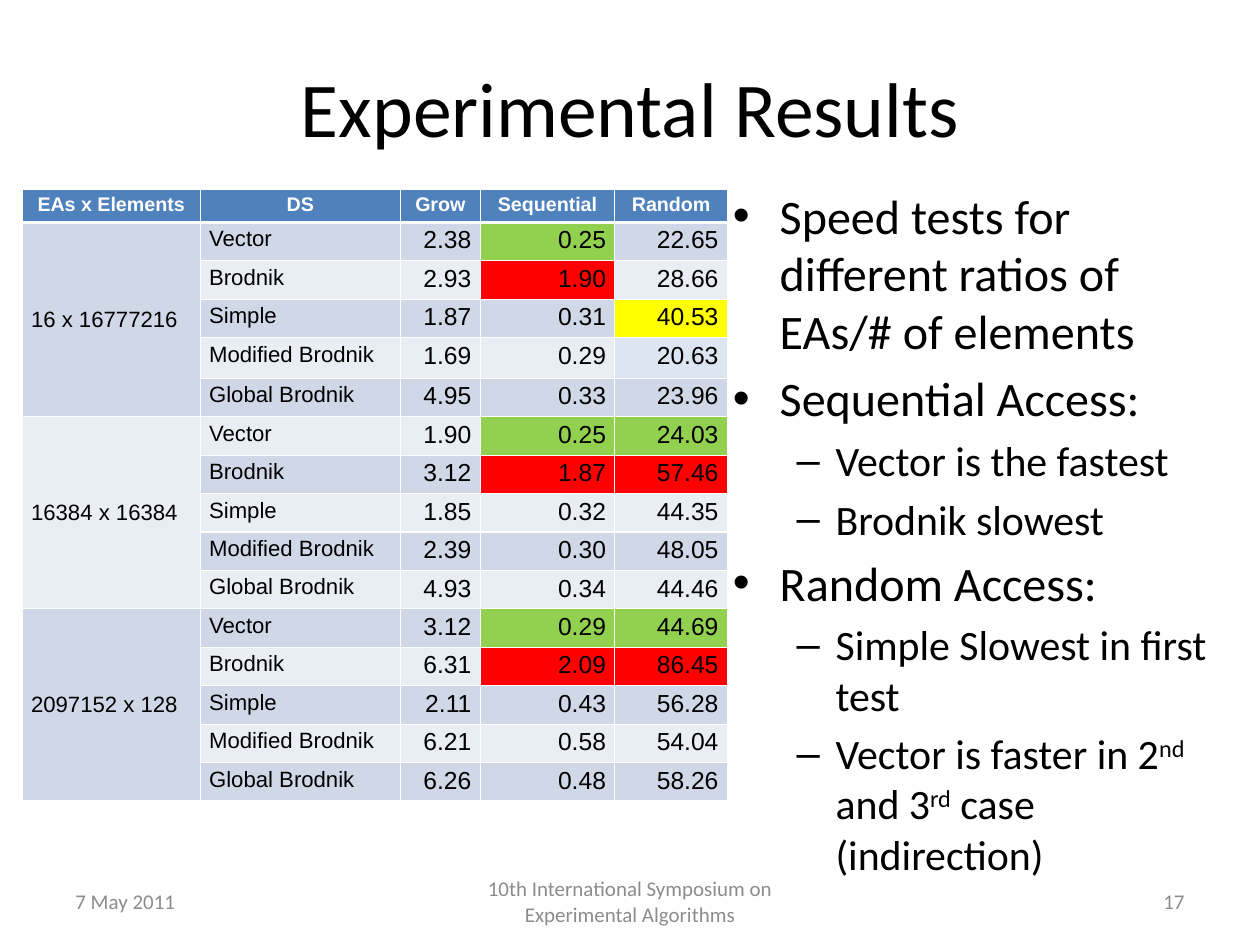
"""Build the Experimental Results slide: a timing table beside its main findings."""
from dataclasses import dataclass

from lxml import etree
from pptx import Presentation
from pptx.dml.color import RGBColor
from pptx.enum.text import MSO_ANCHOR, PP_ALIGN
from pptx.oxml.ns import qn
from pptx.util import Inches, Pt

LEFT, CENTER, RIGHT = PP_ALIGN.LEFT, PP_ALIGN.CENTER, PP_ALIGN.RIGHT
TOP, MIDDLE = MSO_ANCHOR.TOP, MSO_ANCHOR.MIDDLE


@dataclass(frozen=True)
class Theme:
    heading: str = "Calibri"
    data: str = "Arial"
    text: str = "000000"
    muted: str = "8C8C8C"
    white: str = "FFFFFF"
    header: str = "4F81BD"
    bands: tuple = ("E9EDF4", "D0D8E8")
    title_size: float = 63
    body_sizes: tuple = (39.1, 34)
    footer_size: float = 17
    header_size: float = 16
    label_size: float = 18
    value_size: float = 20


T = Theme()
FAST, SLOW, NOTABLE, PALE = "92D050", "FF0000", "FFFF00", "DCE6F2"

TITLE = "Experimental Results"
HEADERS = ["EAs x Elements", "DS", "Grow", "Sequential", "Random"]
STRUCTURES = ["Vector", "Brodnik", "Simple", "Modified Brodnik", "Global Brodnik"]
RESULTS = {
    "16 x 16777216": [
        ("2.38", "0.25", "22.65"), ("2.93", "1.90", "28.66"), ("1.87", "0.31", "40.53"),
        ("1.69", "0.29", "20.63"), ("4.95", "0.33", "23.96")],
    "16384 x 16384": [
        ("1.90", "0.25", "24.03"), ("3.12", "1.87", "57.46"), ("1.85", "0.32", "44.35"),
        ("2.39", "0.30", "48.05"), ("4.93", "0.34", "44.46")],
    "2097152 x 128": [
        ("3.12", "0.29", "44.69"), ("6.31", "2.09", "86.45"), ("2.11", "0.43", "56.28"),
        ("6.21", "0.58", "54.04"), ("6.26", "0.48", "58.26")],
}
HIGHLIGHTS = {
    (1, 3): FAST, (2, 3): SLOW, (3, 4): NOTABLE, (4, 4): PALE,
    (6, 3): FAST, (6, 4): FAST, (7, 3): SLOW, (7, 4): SLOW,
    (11, 3): FAST, (11, 4): FAST, (12, 3): SLOW, (12, 4): SLOW,
}
FINDINGS = [
    (0, ["Speed tests for different ratios of EAs/# of elements"]),
    (0, ["Sequential Access:"]),
    (1, ["Vector is the fastest"]),
    (1, ["Brodnik slowest"]),
    (0, ["Random Access:"]),
    (1, ["Simple Slowest in first test"]),
    (1, ["Vector is faster in 2", "nd", " and 3", "rd", " case (indirection)"]),
]
SUPERSCRIPTS = {"nd", "rd"}
BULLETS = [("•", 0.53, -0.53), ("–", 1.16, -0.44)]

W, H = 14.22, 10.67
MARGIN = W * 0.05
TABLE_LEFT, TABLE_TOP = 0.25, 2.14
COLUMNS = [2.01, 2.26, 0.9, 1.52, 1.27]
HEADER_HEIGHT, ROW_HEIGHT = 0.37, 0.43
ODD_HEIGHTS = {4: 0.46, 9: 0.31, 14: 0.35}
FOOTER_TOP, FOOTER_HEIGHT, SIDE, MIDDLE_WIDTH = 9.89, 0.57, 3.32, 4.5
FOOTERS = [
    ("7 May 2011", MARGIN, SIDE, LEFT),
    ("10th International Symposium on Experimental Algorithms",
     (W - MIDDLE_WIDTH) / 2, MIDDLE_WIDTH, CENTER),
    ("17", W - MARGIN - SIDE, SIDE, RIGHT),
]


def add_run(p, text, size, font=T.heading, color=T.text, bold=False):
    r = p.add_run()
    r.text = text
    r.font.size, r.font.name, r.font.bold = Pt(size), font, bold
    r.font.color.rgb = RGBColor.from_string(color)
    return r


def add_box(s, left, top, width, height, anchor):
    tf = s.shapes.add_textbox(*map(Inches, (left, top, width, height))).text_frame
    tf.word_wrap = True
    tf.vertical_anchor = anchor
    tf.margin_left = tf.margin_right = Inches(0.14)
    tf.margin_top = tf.margin_bottom = Inches(0.07)
    return tf


def add_line(s, text, box, size, color, align):
    p = add_box(s, *box, MIDDLE).paragraphs[0]
    p.alignment = align
    add_run(p, text, size, color=color)


def add_findings(s):
    tf = add_box(s, 8.13, 2.03, 5.91, 7.34, TOP)
    for i, (level, parts) in enumerate(FINDINGS):
        p = tf.add_paragraph() if i else tf.paragraphs[0]
        p.level = level
        mark, margin, indent = BULLETS[level]
        pPr = p._p.get_or_add_pPr()
        pPr.set("marL", str(Inches(margin)))
        pPr.set("indent", str(Inches(indent)))
        before = etree.SubElement(pPr, qn("a:spcBef"))
        etree.SubElement(before, qn("a:spcPct"), val="20000")
        etree.SubElement(pPr, qn("a:buFont"), typeface=T.data)
        etree.SubElement(pPr, qn("a:buChar"), char=mark)
        for part in parts:
            r = add_run(p, part, T.body_sizes[level])
            if part in SUPERSCRIPTS:
                r.font._element.set("baseline", "30000")


def style_cell(cell, fill, borders):
    tcPr = cell._tc.get_or_add_tcPr()
    for side, width in borders.items():
        ln = etree.SubElement(tcPr, qn(f"a:ln{side}"), w=str(Pt(width)))
        solid = etree.SubElement(ln, qn("a:solidFill"))
        etree.SubElement(solid, qn("a:srgbClr"), val=T.white)
    cell.fill.solid()
    cell.fill.fore_color.rgb = RGBColor.from_string(fill)


def fill_cell(cell, text, size, align, color=T.text, bold=False):
    p = cell.text_frame.paragraphs[0]
    p.alignment = align
    add_run(p, text, size, T.data, color, bold)


def add_results(s):
    group = len(STRUCTURES)
    count = 1 + group * len(RESULTS)
    heights = [HEADER_HEIGHT] + [ODD_HEIGHTS.get(i, ROW_HEIGHT) for i in range(1, count)]
    frame = s.shapes.add_table(count, len(COLUMNS), *map(
        Inches, (TABLE_LEFT, TABLE_TOP, sum(COLUMNS), sum(heights))))
    table = frame.table
    for column, width in zip(table.columns, COLUMNS):
        column.width = Inches(width)
    for row, height in zip(table.rows, heights):
        row.height = Inches(height)

    for col, text in enumerate(HEADERS):
        cell = table.cell(0, col)
        style_cell(cell, T.header, {"L": 1, "R": 1, "T": 1, "B": 3})
        fill_cell(cell, text, T.header_size, CENTER, T.white, True)

    for g, (ratio, timings) in enumerate(RESULTS.items()):
        first = 1 + g * group
        for row, (name, values) in enumerate(zip(STRUCTURES, timings), first):
            for col in range(len(COLUMNS)):
                band = T.bands[(row if col else first) % 2]
                style_cell(table.cell(row, col), HIGHLIGHTS.get((row, col), band),
                           {"L": 1, "R": 1, "B": 1})
            fill_cell(table.cell(row, 1), name, T.label_size, LEFT)
            for col, value in enumerate(values, 2):
                fill_cell(table.cell(row, col), value, T.value_size, RIGHT)
        head = table.cell(first, 0)
        head.merge(table.cell(first + group - 1, 0))
        head.vertical_anchor = MIDDLE
        fill_cell(head, ratio, T.label_size, LEFT)


def main():
    prs = Presentation()
    prs.slide_width, prs.slide_height = Inches(W), Inches(H)
    s = prs.slides.add_slide(prs.slide_layouts[6])
    add_line(s, TITLE, (MARGIN, 0.37, W - 2 * MARGIN, 1.66), T.title_size, T.text, CENTER)
    add_findings(s)
    add_results(s)
    for text, left, width, align in FOOTERS:
        add_line(s, text, (left, FOOTER_TOP, width, FOOTER_HEIGHT),
                 T.footer_size, T.muted, align)
    prs.save("out.pptx")


if __name__ == "__main__":
    main()
